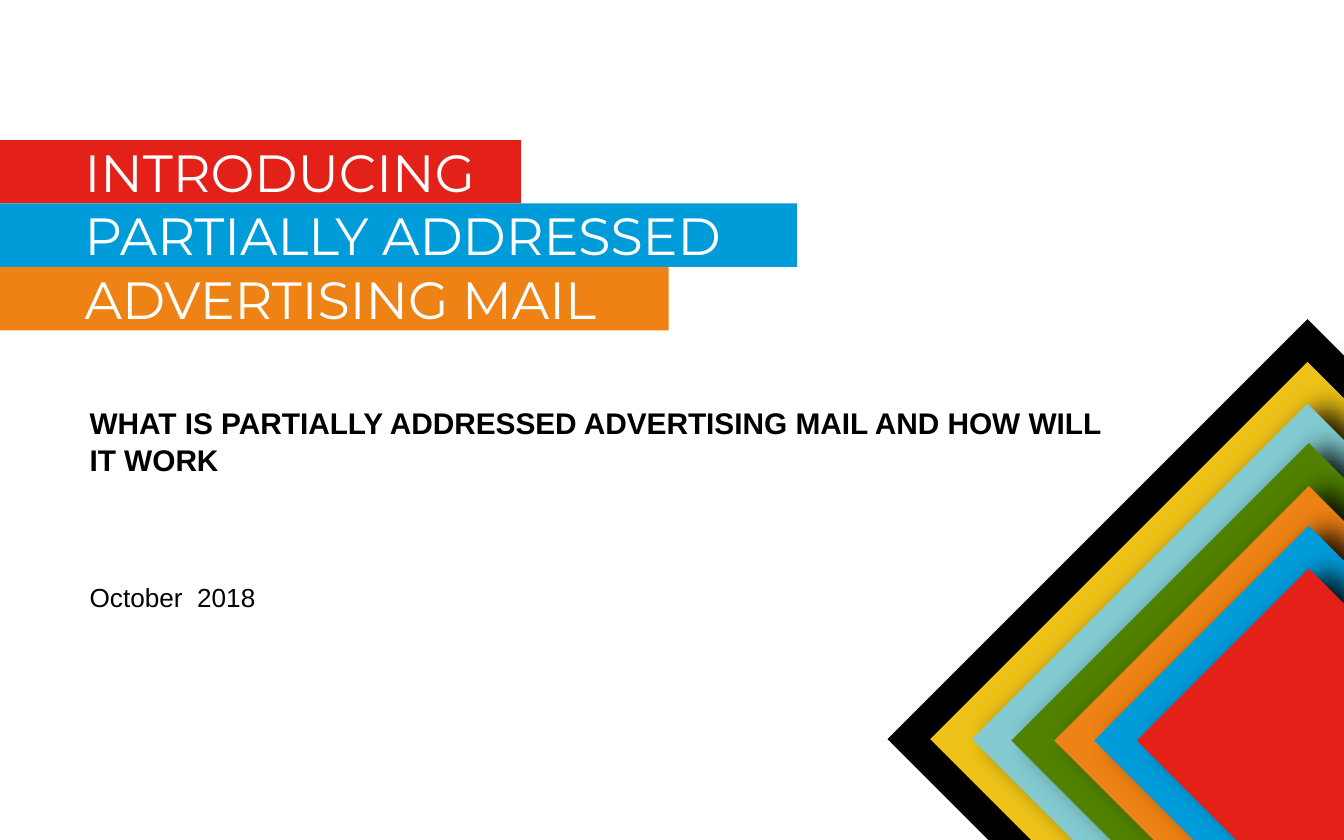
from pptx import Presentation
from pptx.dml.color import RGBColor as Rgb
from pptx.enum.shapes import MSO_SHAPE as Kind
from pptx.enum.text import MSO_ANCHOR as Anchor, PP_ALIGN as Align
from pptx.oxml import parse_xml
from pptx.oxml.ns import nsdecls
from pptx.util import Pt

HUES = {
    "black": "000000",
    "white": "FFFFFF",
    "yellow": "EEC216",
    "aqua": "82CBD0",
    "green": "508200",
    "orange": "EF8214",
    "blue": "009CDA",
    "red": "E32119",
}


class Page:
    def __init__(self, slide):
        self.slide = slide
        self.head = "Montserrat"
        self.body = "Arial"

    def rect(self, x, y, w, h, hue):
        box = self.slide.shapes.add_shape(Kind.RECTANGLE, Pt(x), Pt(y), Pt(w), Pt(h))
        box.shadow.inherit = False
        box.fill.solid()
        box.fill.fore_color.rgb = Rgb.from_string(HUES[hue])
        box.line.fill.background()
        return box

    def diamond(self, x, y, w, h, hue, shade):
        box = self.rect(x - w / 2, y - h / 2, w, h, hue)
        box.rotation = 45
        if shade:
            self.shade(box)

    def shade(self, box, blur=15, dist=10, alpha=90):
        box.shadow.inherit = True
        box._element.spPr.append(parse_xml(
            f'<a:effectLst {nsdecls("a")}>'
            f'<a:outerShdw blurRad="{Pt(blur)}" dist="{Pt(dist)}" dir="0">'
            f'<a:srgbClr val="{HUES["black"]}"><a:alpha val="{alpha * 1000}"/></a:srgbClr>'
            '</a:outerShdw></a:effectLst>'))

    def label(self, box, text, font, size, hue, pads, bold=False, space=1.0):
        frame = box.text_frame
        frame.word_wrap = True
        frame.vertical_anchor = Anchor.TOP
        left, top, right, base = pads
        frame.margin_left, frame.margin_top = Pt(left), Pt(top)
        frame.margin_right, frame.margin_bottom = Pt(right), Pt(base)
        frame.text = text
        para = frame.paragraphs[0]
        para.alignment = Align.LEFT
        para.line_spacing = space
        style = para.runs[0].font
        style.name, style.size, style.bold = font, Pt(size), bold
        style.color.rgb = Rgb.from_string(HUES[hue])

    def bar(self, y, w, h, hue, text):
        box = self.rect(0, y, w, h, hue)
        self.label(box, text, self.head, 28, "white", (45.4, 0, 7.2, 0))

    def note(self, x, y, w, h, text, size, bold=False):
        box = self.slide.shapes.add_textbox(Pt(x), Pt(y), Pt(w), Pt(h))
        self.label(box, text, self.body, size, "black", (6.5, 4, 6.5, 3), bold, 1.05)


def main():
    deck = Presentation()
    deck.slide_width, deck.slide_height = Pt(720), Pt(450)
    page = Page(deck.slides.add_slide(deck.slide_layouts[6]))

    rings = [
        ("black", 318.2, 318.2),
        ("yellow", 285.8, 285.8),
        ("aqua", 254.2, 254.2),
        ("green", 223.2, 225.4),
        ("orange", 190.8, 193),
        ("blue", 160.6, 162.7),
        ("red", 128.2, 130.3),
    ]
    for step, (hue, w, h) in enumerate(rings):
        page.diamond(700.4, 396, w, h, hue, step > 0)

    bars = [
        ("red", 279.2, "INTRODUCING"),
        ("blue", 426.9, "PARTIALLY ADDRESSED"),
        ("orange", 358.3, "ADVERTISING MAIL"),
    ]
    for row, (hue, w, text) in enumerate(bars):
        page.bar(75 + 34 * row, w, 34, hue, text)

    page.note(41.5, 211.7, 558, 38,
              "WHAT IS PARTIALLY ADDRESSED ADVERTISING MAIL AND HOW WILL IT WORK", 16, True)
    page.note(41.5, 306.7, 400, 38, "October  2018", 14)

    deck.save("out.pptx")


if __name__ == "__main__":
    main()
